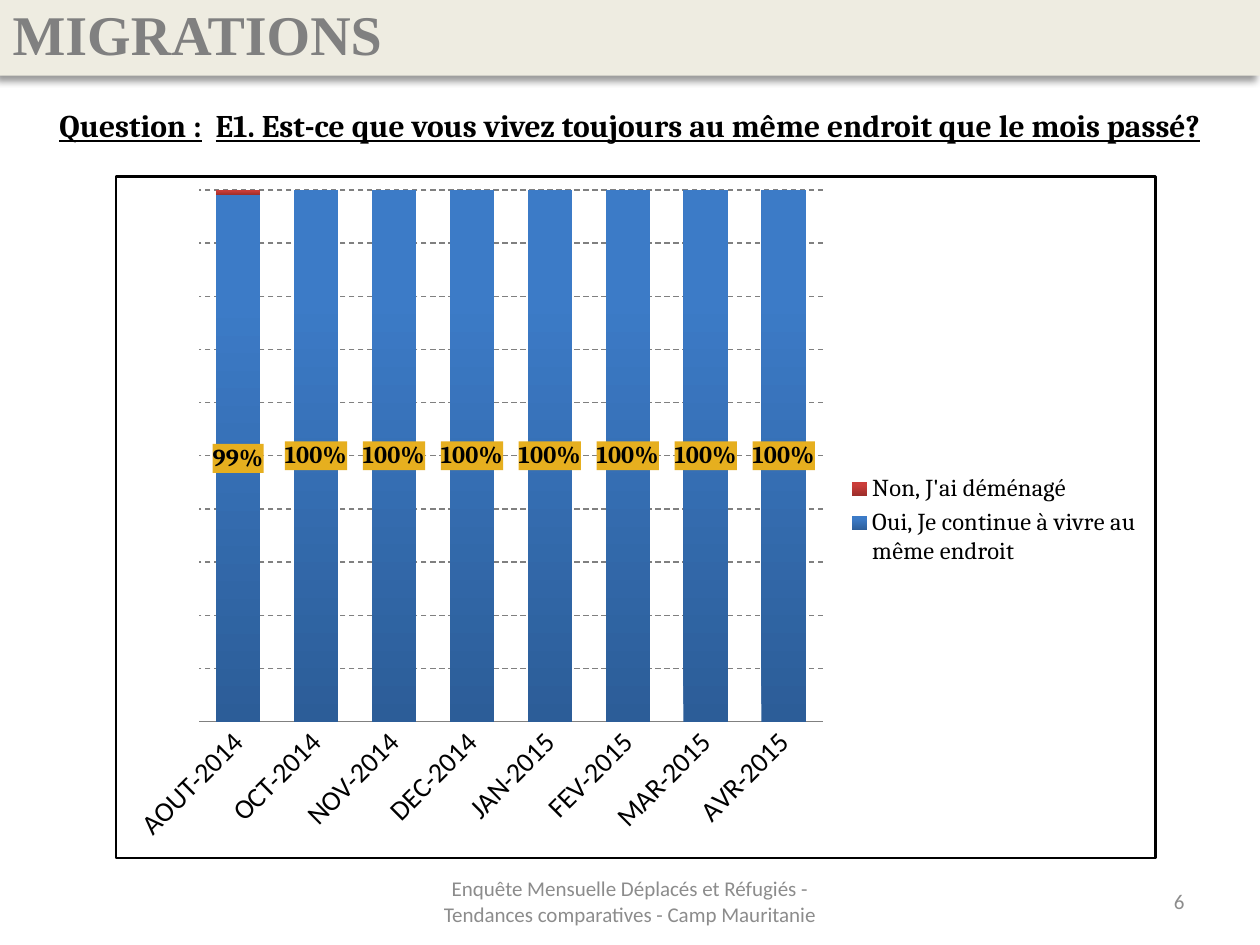
from lxml import etree
from pptx import Presentation
from pptx.chart.data import CategoryChartData
from pptx.dml.color import RGBColor
from pptx.enum.chart import XL_CHART_TYPE, XL_LEGEND_POSITION, XL_TICK_MARK
from pptx.enum.dml import MSO_LINE
from pptx.enum.text import MSO_ANCHOR, PP_ALIGN
from pptx.oxml import parse_xml
from pptx.oxml.ns import nsdecls, qn
from pptx.util import Pt

STACKED_100 = XL_CHART_TYPE.COLUMN_STACKED_100
LEGEND_RIGHT = XL_LEGEND_POSITION.RIGHT
NO_TICKS = XL_TICK_MARK.NONE
DASH = MSO_LINE.DASH
MIDDLE = MSO_ANCHOR.MIDDLE
LEFT, CENTER, RIGHT = PP_ALIGN.LEFT, PP_ALIGN.CENTER, PP_ALIGN.RIGHT

BLACK = RGBColor(0x00, 0x00, 0x00)
GRAY = RGBColor(0x80, 0x80, 0x80)
FOOTER_GRAY = RGBColor(0x8C, 0x8C, 0x8C)
CREAM = RGBColor(0xEE, 0xEC, 0xE1)
LABEL_GOLD = RGBColor(0xE6, 0xAF, 0x1F)
BLUE_DARK, BLUE_LIGHT = RGBColor(0x2C, 0x5D, 0x98), RGBColor(0x3C, 0x7B, 0xC7)
RED_DARK, RED_LIGHT = RGBColor(0x9B, 0x2D, 0x2A), RGBColor(0xCB, 0x3D, 0x3A)

MONTHS = ["AOUT-2014", "OCT-2014", "NOV-2014", "DEC-2014",
          "JAN-2015", "FEV-2015", "MAR-2015", "AVR-2015"]
STAYED = [0.99] + [1] * 7
MOVED = [0.01] + [0] * 7


def set_font(font, name, size, color=BLACK, bold=False):
    font.name, font.size, font.bold = name, Pt(size), bold
    font.color.rgb = color


def place(shape, left, top, width, height):
    shape.left, shape.top = Pt(left), Pt(top)
    shape.width, shape.height = Pt(width), Pt(height)


def add_title(slide, text):
    title = slide.shapes.title
    place(title, 0, 0, 720, 43.2)
    title.fill.solid()
    title.fill.fore_color.rgb = CREAM
    title.text_frame.text = text
    title.text_frame.vertical_anchor = MIDDLE
    paragraph = title.text_frame.paragraphs[0]
    paragraph.alignment = LEFT
    paragraph.line_spacing = 0.9
    set_font(paragraph.font, "Times New Roman", 32, GRAY, bold=True)
    title._element.spPr.append(parse_xml(
        f'<a:effectLst {nsdecls("a")}>'
        f'<a:outerShdw blurRad="{Pt(4)}" dist="{Pt(4)}" dir="8100000" rotWithShape="0">'
        '<a:srgbClr val="000000"><a:alpha val="40000"/></a:srgbClr>'
        '</a:outerShdw></a:effectLst>'))


def add_text(slide, box, runs, alignment, font_name, size, color=BLACK, bold=False):
    """Add a one-paragraph text box; runs are (text, underlined) pairs."""
    frame = slide.shapes.add_textbox(*map(Pt, box)).text_frame
    frame.word_wrap = True
    frame.vertical_anchor = MIDDLE
    paragraph = frame.paragraphs[0]
    paragraph.alignment = alignment
    set_font(paragraph.font, font_name, size, color, bold)
    for text, underlined in runs:
        run = paragraph.add_run()
        run.text = text
        if underlined:
            run.font.underline = True


def set_layout(element, index, inner, **fractions):
    """Give a plot area or legend a manual place in fractions of the chart."""
    for old in element.findall(qn("c:layout")):
        element.remove(old)
    layout = parse_xml(f'<c:layout {nsdecls("c")}><c:manualLayout/></c:layout>')
    settings = {"layoutTarget": "inner"} if inner else {}
    settings.update(xMode="edge", yMode="edge", **fractions)
    for name, value in settings.items():
        etree.SubElement(layout[0], qn(f"c:{name}")).set("val", str(value))
    element.insert(index, layout)


def fill_upward(fill, dark, light):
    fill.gradient()
    fill.gradient_angle = 90
    for stop, color, position in zip(fill.gradient_stops, (dark, light), (0, 0.8)):
        stop.color.rgb = color
        stop.position = position


def add_labels(series):
    labels = series.data_labels
    labels.show_value = True
    labels.number_format = "0%"
    labels.number_format_is_linked = False
    set_font(labels.font, "Cambria", 14, bold=True)
    labels._element.find(qn("c:numFmt")).addnext(parse_xml(
        f'<c:spPr {nsdecls("c", "a")}><a:solidFill>'
        f'<a:srgbClr val="{LABEL_GOLD}"/></a:solidFill></c:spPr>'))


def format_axes(chart):
    months = chart.category_axis
    months.major_tick_mark = NO_TICKS
    months.format.line.color.rgb = GRAY
    set_font(months.tick_labels.font, "Calibri", 16)
    months._element.find(qn("c:txPr")).find(qn("a:bodyPr")).set("rot", "-2700000")
    shares = chart.value_axis
    shares.visible = False
    shares.minimum_scale, shares.maximum_scale, shares.major_unit = 0, 1, 0.1
    shares.tick_labels.number_format = "0%"
    shares.tick_labels.number_format_is_linked = False
    gridline = shares.major_gridlines.format.line
    gridline.color.rgb = GRAY
    gridline.width = Pt(0.75)
    gridline.dash_style = DASH


def add_migration_chart(slide):
    data = CategoryChartData(number_format="0%")
    data.categories = MONTHS
    data.add_series("Oui, Je continue à vivre au même endroit", STAYED)
    data.add_series("Non, J'ai déménagé", MOVED)
    box = map(Pt, (65.5, 100, 595.5, 391))
    chart = slide.shapes.add_chart(STACKED_100, *box, data).chart
    chart.has_title = False
    set_font(chart.font, "Calibri", 10)
    format_axes(chart)

    plot = chart.plots[0]
    plot.gap_width, plot.overlap = 75, 100
    plot.vary_by_categories = False
    stayed, moved = plot.series
    fill_upward(stayed.format.fill, BLUE_DARK, BLUE_LIGHT)
    fill_upward(moved.format.fill, RED_DARK, RED_LIGHT)
    add_labels(stayed)

    chart.has_legend = True
    chart.legend.position = LEGEND_RIGHT
    chart.legend.include_in_layout = False
    set_font(chart.legend.font, "Cambria", 14)

    chart_element = chart._chartSpace.find(qn("c:chart"))
    set_layout(chart_element.find(qn("c:plotArea")), 0, True, x=0.08, y=0.02, w=0.6, h=0.78)
    set_layout(chart.legend._element, 1, False, x=0.7, y=0.43, w=0.29, h=0.15)
    chart_element.addnext(parse_xml(
        f'<c:spPr {nsdecls("c", "a")}><a:noFill/><a:ln w="{Pt(1.5)}"><a:solidFill>'
        f'<a:srgbClr val="{BLACK}"/></a:solidFill></a:ln></c:spPr>'))


def main():
    presentation = Presentation()
    presentation.slide_width, presentation.slide_height = Pt(720), Pt(540)
    slide = presentation.slides.add_slide(presentation.slide_layouts[5])
    add_title(slide, "MIGRATIONS")
    question = [("Question :", True), ("  ", False),
                ("E1. Est-ce que vous vivez toujours au même endroit que le mois passé?", True)]
    add_text(slide, (0, 57, 720, 29), question, CENTER, "Cambria", 18, bold=True)
    add_migration_chart(slide)
    footer = "Enquête Mensuelle Déplacés et Réfugiés - Tendances comparatives - Camp Mauritanie"
    add_text(slide, (246, 500.5, 228, 28.8), [(footer, False)], CENTER, "Calibri", 12, FOOTER_GRAY)
    add_text(slide, (516, 500.5, 168, 28.8), [("6", False)], RIGHT, "Calibri", 12, FOOTER_GRAY)
    presentation.save("out.pptx")


if __name__ == "__main__":
    main()
